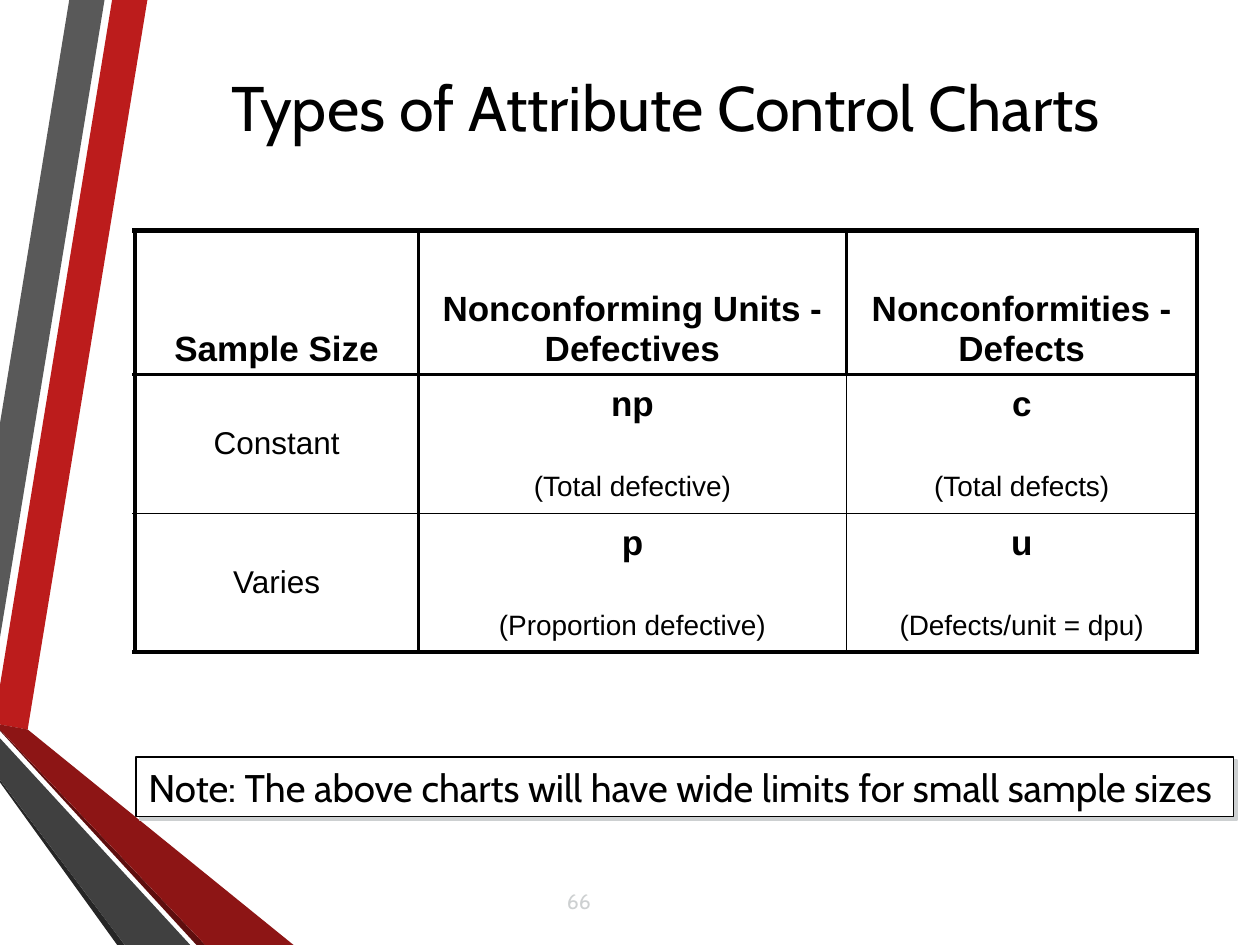
from collections import namedtuple

from lxml.etree import SubElement
from pptx import Presentation
from pptx.dml.color import RGBColor
from pptx.enum.shapes import MSO_SHAPE
from pptx.enum.text import MSO_ANCHOR, MSO_AUTO_SIZE, PP_ALIGN
from pptx.oxml.ns import qn
from pptx.util import Inches, Pt

COLORS = {
    "black": "000000", "white": "FFFFFF", "pale": "CDD0D1",
    "red": "BC1C1C", "dark_red": "8D1515", "red_edge": "5E0E0E",
    "gray": "595959", "dark_gray": "404040", "gray_edge": "262626",
}
Box = namedtuple("Box", "left top width height")

# Corners in percent of the slide's width and height
RIBBONS = [
    ("red", [(0, 72.53), (0, 76.67), (2.2, 77.2), (11.7, 0), (8.9, 0)]),
    ("gray", [(8.3, 0), (5.5, 0), (0, 44.8), (0, 67.47)]),
    ("gray_edge", [(0, 82.53), (0, 82.8), (9.3, 100), (9.9, 100)]),
    ("red_edge", [(0, 77.2), (0, 77.33), (15.6, 100), (16.3, 100)]),
    ("dark_red", [(0, 77.2), (16.3, 100), (23.3, 100), (2.2, 77.2), (0, 76.67)]),
    ("dark_gray", [(0, 82.53), (9.9, 100), (15.1, 100), (0, 78.13)]),
]

# Each cell lists its paragraphs as (text, size, bold)
CHART_TYPES = [
    [[("Sample Size", 20, True)],
     [("Nonconforming Units - Defectives", 20, True)],
     [("Nonconformities - Defects", 20, True)]],
    [[("Constant", 18, False)],
     [("np", 20, True), ("(Total defective)", 16, False)],
     [("c", 20, True), ("(Total defects)", 16, False)]],
    [[("Varies", 18, False)],
     [("p", 20, True), ("(Proportion defective)", 16, False)],
     [("u", 20, True), ("(Defects/unit = dpu)", 16, False)]],
]
COLUMN_SHARES = [0.267, 0.403, 0.33]
ROW_SHARES = [0.342, 0.329, 0.329]
OUTER, HEADER, INNER = 3, 2.25, 1


def rgb(name):
    return RGBColor.from_string(COLORS[name])


def part(box, left, top, width, height):
    """Return the box that covers the given shares of another box."""
    return Box(int(box.left + left * box.width), int(box.top + top * box.height),
               int(width * box.width), int(height * box.height))


def style(p, size, color="black", font="Cabin", bold=False, align=PP_ALIGN.LEFT):
    p.alignment = align
    p.font.size, p.font.name, p.font.bold = Pt(size), font, bold
    p.font.color.rgb = rgb(color)


def add_ribbons(slide, box):
    for color, corners in RIBBONS:
        points = [(int(box.left + x * box.width / 100),
                   int(box.top + y * box.height / 100)) for x, y in corners]
        builder = slide.shapes.build_freeform(*points[0])
        builder.add_line_segments(points[1:], close=True)
        sp = builder.convert_to_shape()
        sp.shadow.inherit = False
        sp.fill.solid()
        sp.fill.fore_color.rgb = rgb(color)
        sp.line.fill.background()


def fill_title(slide, box):
    title = slide.shapes.title
    title.left, title.top, title.width, title.height = box
    tf = title.text_frame
    tf.text = "Types of Attribute Control Charts"
    tf.auto_size = MSO_AUTO_SIZE.NONE
    tf.vertical_anchor = MSO_ANCHOR.MIDDLE
    style(tf.paragraphs[0], 36, align=PP_ALIGN.CENTER)


def set_borders(cell, widths):
    """Draw the left, right, top and bottom edges; the fill must come later."""
    tc_pr = cell._tc.get_or_add_tcPr()
    for side, width in zip("LRTB", widths):
        ln = SubElement(tc_pr, qn(f"a:ln{side}"), w=str(Pt(width)))
        fill = SubElement(ln, qn("a:solidFill"))
        SubElement(fill, qn("a:srgbClr"), val=COLORS["black"])


def edge_width(index, count, after_first):
    """Weight of a grid line, counted from the table's left or top."""
    if index in (0, count):
        return OUTER
    return after_first if index == 1 else INNER


def fill_cell(cell, paragraphs, anchor):
    tf = cell.text_frame
    cell.vertical_anchor = anchor
    for i, (text, size, bold) in enumerate(paragraphs):
        p = tf.add_paragraph() if i else tf.paragraphs[0]
        p.text = text
        style(p, size, font="Arial", bold=bold, align=PP_ALIGN.CENTER)
        if i:
            p.space_before = Pt(27)


def add_chart_types(slide, box):
    rows, cols = len(CHART_TYPES), len(CHART_TYPES[0])
    table = slide.shapes.add_table(rows, cols, *box).table
    table.first_row = table.horz_banding = False
    for column, share in zip(table.columns, COLUMN_SHARES):
        column.width = int(box.width * share)
    for row, share in zip(table.rows, ROW_SHARES):
        row.height = int(box.height * share)
    for r, line in enumerate(CHART_TYPES):
        for c, paragraphs in enumerate(line):
            cell = table.cell(r, c)
            fill_cell(cell, paragraphs, MSO_ANCHOR.MIDDLE if r else MSO_ANCHOR.BOTTOM)
            verticals = [edge_width(i, cols, HEADER) for i in (c, c + 1)]
            if r == 0:
                verticals = [max(width, HEADER) for width in verticals]
            horizontals = [edge_width(i, rows, HEADER) for i in (r, r + 1)]
            set_borders(cell, verticals + horizontals)
            cell.fill.solid()
            cell.fill.fore_color.rgb = rgb("white")


def add_note(slide, box):
    sp = slide.shapes.add_shape(MSO_SHAPE.RECTANGLE, *box)
    sp.fill.solid()
    sp.fill.fore_color.rgb = rgb("white")
    sp.line.color.rgb = rgb("black")
    sp.line.width = Pt(1)
    sp.shadow.inherit = False
    effects = sp._element.spPr.find(qn("a:effectLst"))
    shadow = SubElement(effects, qn("a:outerShdw"), dist=str(Pt(2.8)),
                        dir=str(45 * 60000), algn="ctr", rotWithShape="0")
    SubElement(shadow, qn("a:srgbClr"), val=COLORS["pale"])
    tf = sp.text_frame
    tf.word_wrap = True
    tf.vertical_anchor = MSO_ANCHOR.MIDDLE
    p = tf.paragraphs[0]
    p.text = "Note: The above charts will have wide limits for small sample sizes"
    style(p, 22)


def add_page_number(slide, box):
    tf = slide.shapes.add_textbox(*box).text_frame
    tf.word_wrap = True
    tf.margin_left = tf.margin_right = tf.margin_top = tf.margin_bottom = 0
    tf.paragraphs[0].text = "66"
    style(tf.paragraphs[0], 12, "pale")


def main():
    prs = Presentation()
    prs.slide_width, prs.slide_height = Inches(10), Inches(7.5)
    page = Box(0, 0, prs.slide_width, prs.slide_height)
    slide = prs.slides.add_slide(prs.slide_layouts.get_by_name("Title Only"))
    add_ribbons(slide, page)
    add_page_number(slide, part(page, 0.45, 0.94, 0.1, 0.035))
    fill_title(slide, part(page, 0.107, 0.067, 0.843, 0.092))
    add_chart_types(slide, part(page, 0.107, 0.244, 0.843, 0.446))
    add_note(slide, part(page, 0.108, 0.801, 0.871, 0.063))
    prs.save("out.pptx")


if __name__ == "__main__":
    main()
